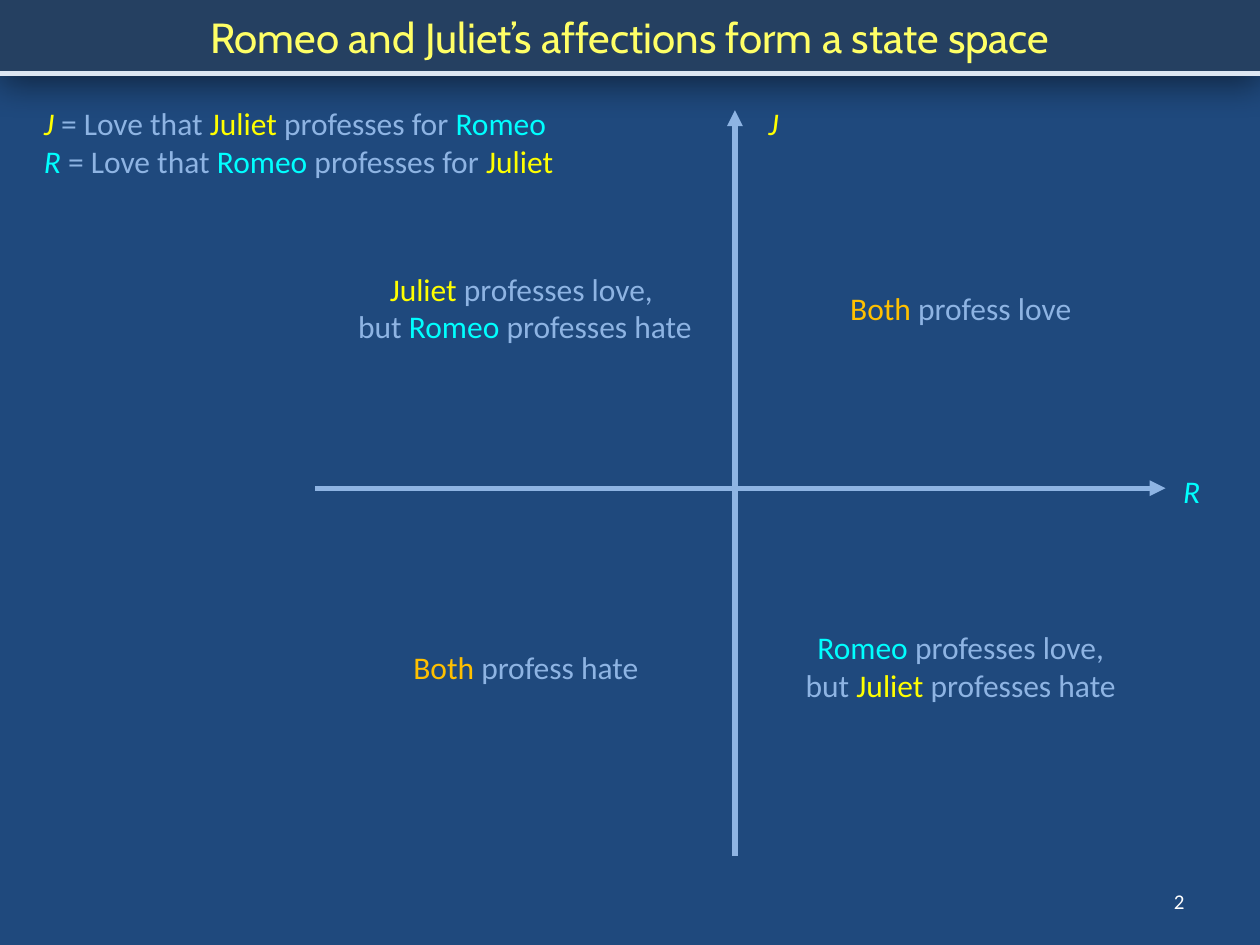
from lxml import etree
from pptx import Presentation
from pptx.dml.color import RGBColor
from pptx.enum.shapes import MSO_CONNECTOR, MSO_SHAPE
from pptx.enum.text import MSO_ANCHOR, MSO_AUTO_SIZE, PP_ALIGN
from pptx.oxml import parse_xml
from pptx.oxml.ns import nsdecls, qn
from pptx.util import Pt

LEFT, MID, RIGHT = PP_ALIGN.LEFT, PP_ALIGN.CENTER, PP_ALIGN.RIGHT
TOP, CENTRE = MSO_ANCHOR.TOP, MSO_ANCHOR.MIDDLE
RECT, STRAIGHT = MSO_SHAPE.RECTANGLE, MSO_CONNECTOR.STRAIGHT
FIT, FIXED = MSO_AUTO_SIZE.SHAPE_TO_FIT_TEXT, MSO_AUTO_SIZE.NONE

NAVY = RGBColor(0x1F, 0x49, 0x7D)
DARK = RGBColor(0x25, 0x40, 0x61)
SKY = RGBColor(0x8E, 0xB4, 0xE3)
PALE = RGBColor(0xDC, 0xE6, 0xF2)
YELLOW = RGBColor(0xFF, 0xFF, 0x00)
LEMON = RGBColor(0xFF, 0xFF, 0x66)
CYAN = RGBColor(0x00, 0xFF, 0xFF)
ORANGE = RGBColor(0xFF, 0xC0, 0x00)
WHITE = RGBColor(0xFF, 0xFF, 0xFF)

HUES = {"J": YELLOW, "Juliet": YELLOW, "R": CYAN, "Romeo": CYAN, "Both": ORANGE}


def write(frame, lines, align=LEFT, size=18, face="Calibri", base=SKY):
    """Fill a frame; "|" parts the runs, and names take their own hue."""
    for i, line in enumerate(lines):
        para = frame.paragraphs[0] if i == 0 else frame.add_paragraph()
        para.alignment = align
        for part in line.split("|"):
            run = para.add_run()
            run.text = part
            name = part.strip()
            look = {"name": face, "size": Pt(size), "italic": name in ("J", "R")}
            for key, value in look.items():
                setattr(run.font, key, value)
            run.font.color.rgb = HUES.get(name, base)


deck = Presentation()
deck.slide_width, deck.slide_height = Pt(720), Pt(540)
slide = deck.slides.add_slide(deck.slide_layouts[6])
slide.background.fill.solid()
slide.background.fill.fore_color.rgb = NAVY
shapes = slide.shapes

# Title bar with a soft shadow, and the frame whose top edge underlines it
bar = shapes.add_shape(RECT, 0, 0, Pt(720), Pt(42))
bar.fill.solid()
bar.fill.fore_color.rgb = DARK
bar.line.fill.background()
bar._element.spPr.append(parse_xml(
    f'<a:effectLst {nsdecls("a")}>'
    f'<a:outerShdw blurRad="{Pt(20)}" dist="{Pt(5)}" dir="5400000" algn="t" rotWithShape="0">'
    '<a:srgbClr val="000000"><a:alpha val="50000"/></a:srgbClr>'
    '</a:outerShdw></a:effectLst>'))
bar.text_frame.word_wrap = True
bar.text_frame.vertical_anchor = CENTRE
write(bar.text_frame, ["Romeo and Juliet’s affections form a state space"],
      MID, 24, "Cabin", LEMON)

edge = shapes.add_shape(RECT, Pt(-12), Pt(42), Pt(744), Pt(516))
edge.shadow.inherit = False
edge.fill.background()
edge.line.color.rgb = PALE
edge.line.width = Pt(3)

# Axes of the state space
for ends in [(420, 489, 420, 63), (180, 279, 666, 279)]:
    axis = shapes.add_connector(STRAIGHT, *map(Pt, ends))
    axis.line.color.rgb = SKY
    axis.line.width = Pt(3)
    etree.SubElement(axis.line._get_or_add_ln(), qn("a:tailEnd"), type="triangle")
    etree.SubElement(axis._element.spPr, qn("a:effectLst"))

# Axis names, legend and quadrants: place, wrap, alignment, lines
labels = [
    ((432, 56, 20, 29), False, LEFT, ["J"]),
    ((669, 266, 24.5, 29), False, LEFT, ["R"]),
    ((18, 56, 324, 51), True, LEFT,
     ["J |= Love that |Juliet |professes for |Romeo",
      "R |= Love that |Romeo| professes for |Juliet"]),
    ((474, 161.5, 150, 29), True, MID, ["Both |profess love"]),
    ((221, 366.5, 159, 29), True, MID, ["Both |profess hate"]),
    ((452, 355.5, 194, 51), True, MID,
     ["Romeo |professes love, but |Juliet |professes hate"]),
    ((192, 150.5, 216, 51), True, MID,
     ["Juliet |professes love, ", "but |Romeo |professes hate"]),
]
for place, wrap, align, lines in labels:
    frame = shapes.add_textbox(*map(Pt, place)).text_frame
    look = {"word_wrap": wrap, "auto_size": FIT, "vertical_anchor": TOP}
    for key, value in look.items():
        setattr(frame, key, value)
    write(frame, lines, align)

# Page number
frame = shapes.add_textbox(Pt(516), Pt(500.5), Pt(168), Pt(29)).text_frame
look = {"word_wrap": True, "auto_size": FIXED, "vertical_anchor": CENTRE}
for key, value in look.items():
    setattr(frame, key, value)
write(frame, ["2"], RIGHT, 12, base=WHITE)

deck.save("out.pptx")
